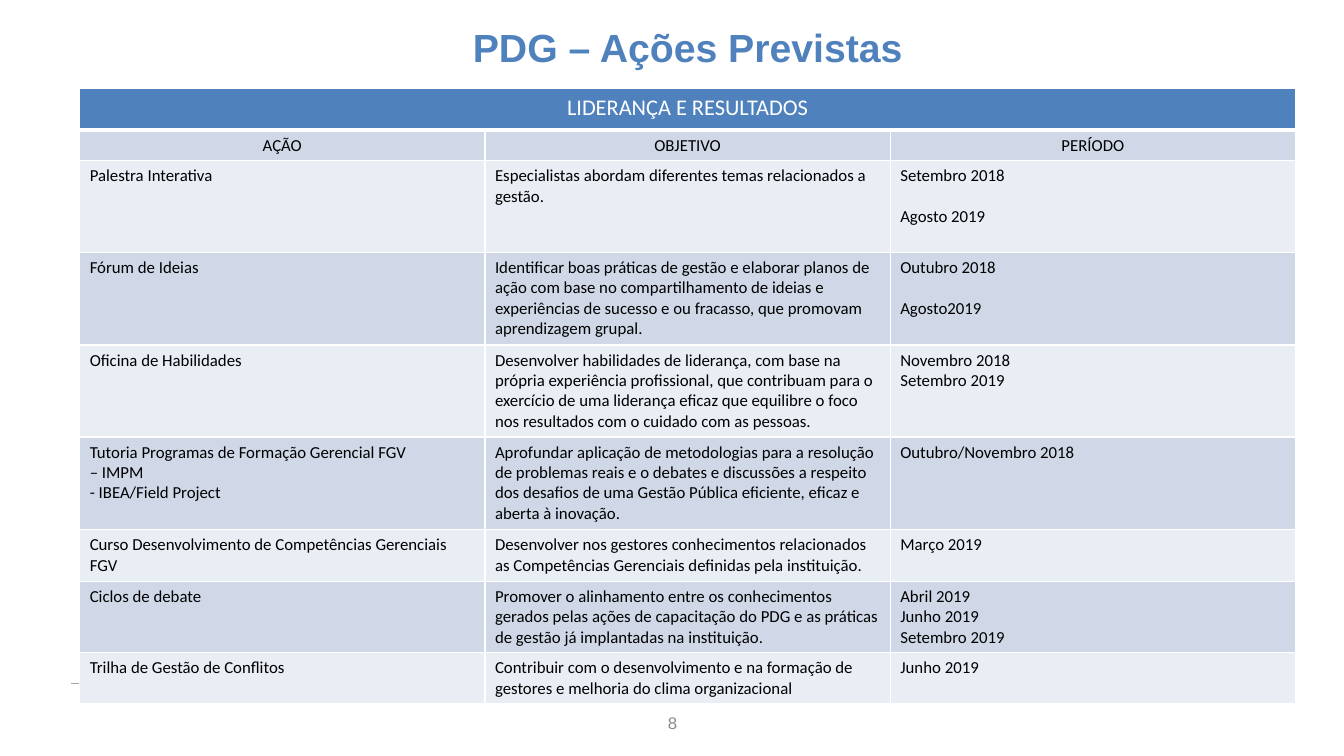
from lxml import etree
from pptx import Presentation
from pptx.dml.color import RGBColor
from pptx.enum.shapes import MSO_CONNECTOR
from pptx.enum.text import MSO_ANCHOR, PP_ALIGN
from pptx.oxml import parse_xml
from pptx.oxml.ns import nsdecls, qn
from pptx.util import Inches, Pt


def color(value):
    return RGBColor.from_string(value)


def add_text(paragraph, text, size, ink, face="Calibri", bold=False):
    run = paragraph.add_run()
    run.text = text
    run.font.size = Pt(size)
    run.font.name = face
    run.font.bold = bold
    run.font.color.rgb = color(ink)


BLUE, DARK_BAND, LIGHT_BAND = "4F81BD", "D0D8E8", "E9EDF4"

actions = [
    (["LIDERANÇA E RESULTADOS"], [], []),
    (["AÇÃO"], ["OBJETIVO"], ["PERÍODO"]),
    (["Palestra Interativa"],
     ["Especialistas abordam diferentes temas relacionados a gestão."],
     ["Setembro 2018", "Agosto 2019"]),
    (["Fórum de Ideias"],
     ["Identificar boas práticas de gestão e elaborar planos de ação com base no "
      "compartilhamento de ideias e experiências de sucesso e ou fracasso, que "
      "promovam aprendizagem grupal."],
     ["Outubro 2018", "Agosto2019"]),
    (["Oficina de Habilidades"],
     ["Desenvolver habilidades de liderança, com base na própria experiência "
      "profissional, que contribuam para o exercício de uma liderança eficaz que "
      "equilibre o foco nos resultados com o cuidado com as pessoas."],
     ["Novembro 2018", "Setembro 2019"]),
    (["Tutoria Programas de Formação Gerencial FGV", "– IMPM", "- IBEA/Field Project"],
     ["Aprofundar aplicação de metodologias para a resolução de problemas reais e o "
      "debates e discussões a respeito dos desafios de uma Gestão Pública eficiente, "
      "eficaz e aberta à inovação."],
     ["Outubro/Novembro 2018"]),
    (["Curso Desenvolvimento de Competências Gerenciais FGV"],
     ["Desenvolver nos gestores conhecimentos relacionados as Competências "
      "Gerenciais definidas pela instituição."],
     ["Março 2019"]),
    (["Ciclos de debate"],
     ["Promover o alinhamento entre os conhecimentos gerados pelas ações de "
      "capacitação do PDG e as práticas de gestão já implantadas na instituição."],
     ["Abril 2019", "Junho 2019", "Setembro 2019"]),
    (["Trilha de Gestão de Conflitos"],
     ["Contribuir com o desenvolvimento e na formação de gestores e melhoria do "
      "clima organizacional"],
     ["Junho 2019"]),
]
row_heights = [0.41, 0.3, 0.91, 0.92, 0.91, 0.92, 0.51, 0.71, 0.5]
spaced_rows = (2, 3)

prs = Presentation()
prs.slide_width, prs.slide_height = Inches(13.33), Inches(7.5)
slide = prs.slides.add_slide(prs.slide_layouts[6])

footer_rule = slide.shapes.add_connector(
    MSO_CONNECTOR.STRAIGHT, Inches(0.7), Inches(6.78), Inches(12.68), Inches(6.78))
footer_rule.line.color.rgb = color("A6A6A6")
footer_rule.line.width = Pt(0.25)
etree.SubElement(footer_rule._element.spPr, qn("a:effectLst"))

schedule = slide.shapes.add_table(
    len(actions), 3, Inches(0.79), Inches(0.88), Inches(12.06), Inches(sum(row_heights))).table
for column in schedule.columns:
    column.width = Inches(4.02)

for r, (action, height) in enumerate(zip(actions, row_heights)):
    schedule.rows[r].height = Inches(height)
    band = BLUE if r == 0 else DARK_BAND if r % 2 else LIGHT_BAND
    for c, lines in enumerate(action):
        cell = schedule.cell(r, c)
        for side in "LRTB":
            heavy = (r, side) in ((0, "B"), (1, "T"))
            cell._tc.get_or_add_tcPr().append(parse_xml(
                f'<a:ln{side} {nsdecls("a")} w="{Pt(3 if heavy else 1)}"><a:solidFill>'
                f'<a:srgbClr val="FFFFFF"/></a:solidFill></a:ln{side}>'))
        cell.fill.solid()
        cell.fill.fore_color.rgb = color(band)
        for i, line in enumerate(lines):
            frame = cell.text_frame
            paragraph = frame.add_paragraph() if i else frame.paragraphs[0]
            paragraph.alignment = PP_ALIGN.CENTER if r < 2 else PP_ALIGN.LEFT
            if i and r in spaced_rows:
                paragraph.space_before = Pt(14.65)
            add_text(paragraph, line, 12 if r else 16, "000000" if r else "FFFFFF")
schedule.cell(0, 0).merge(schedule.cell(0, 2))

captions = [
    ("PDG – Ações Previstas", (1.85, 0.18, 9.94, 0.57), 28, BLUE, True, MSO_ANCHOR.TOP),
    ("8", (5.87, 6.97, 1.6, 0.4), 12, "8C8C8C", False, MSO_ANCHOR.MIDDLE),
]
for text, place, size, ink, bold, anchor in captions:
    caption = slide.shapes.add_textbox(*map(Inches, place)).text_frame
    caption.word_wrap = True
    caption.vertical_anchor = anchor
    caption.paragraphs[0].alignment = PP_ALIGN.CENTER
    add_text(caption.paragraphs[0], text, size, ink, "Arial", bold)

prs.save("out.pptx")
